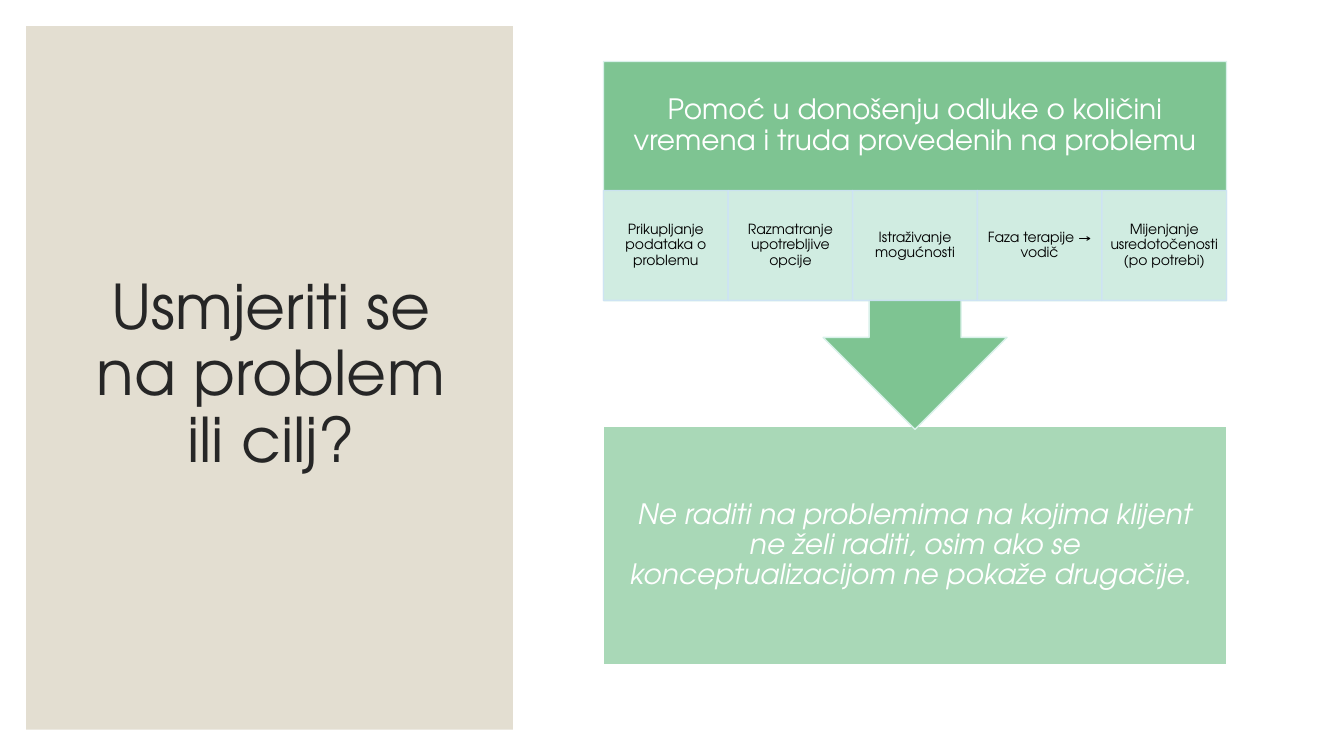
from dataclasses import dataclass

from lxml import etree
from pptx import Presentation
from pptx.dml.color import RGBColor
from pptx.enum.shapes import MSO_SHAPE
from pptx.enum.text import MSO_ANCHOR, MSO_AUTO_SIZE, PP_ALIGN
from pptx.oxml.ns import qn
from pptx.util import Cm, Pt

RECTANGLE = MSO_SHAPE.RECTANGLE
ARROW_CALLOUT = MSO_SHAPE.UP_ARROW_CALLOUT
MIDDLE = MSO_ANCHOR.MIDDLE
CENTER = PP_ALIGN.CENTER
NO_AUTOFIT = MSO_AUTO_SIZE.NONE


@dataclass(frozen=True)
class Theme:
    font: str = "TeX Gyre Adventor"
    title_size: int = 44
    statement_size: int = 20
    step_size: int = 10
    dark: str = "262626"
    black: str = "000000"
    white: str = "FFFFFF"
    sand: str = "E3DED1"
    green: str = "7EC492"
    light_green: str = "A9D8B7"
    mint: str = "D9F1EA"
    pale_blue: str = "CDE3F5"


theme = Theme()


def add_box(shapes, kind, left, top, width, height, fill, line=None):
    box = shapes.add_shape(kind, Cm(left), Cm(top), Cm(width), Cm(height))
    box.shadow.inherit = False
    box.fill.solid()
    box.fill.fore_color.rgb = RGBColor.from_string(fill)
    if line:
        box.line.color.rgb = RGBColor.from_string(line)
        box.line.width = Pt(1)
    else:
        box.line.fill.background()
    return box


def write(box, text, size, color, side=0.4, edge=0.4, italic=None):
    frame = box.text_frame
    frame.text = text
    frame.word_wrap = True
    frame.auto_size = NO_AUTOFIT
    frame.vertical_anchor = MIDDLE
    frame.margin_left = frame.margin_right = Cm(side)
    frame.margin_top = frame.margin_bottom = Cm(edge)
    para = frame.paragraphs[0]
    para.alignment = CENTER
    para.line_spacing = 0.9
    font = para.runs[0].font
    font.name = theme.font
    font.size = Pt(size)
    font.italic = italic
    font.color.rgb = RGBColor.from_string(color)


deck = Presentation()
deck.slide_width, deck.slide_height = Cm(33.87), Cm(19.05)
page = deck.slides.add_slide(deck.slide_layouts[5])

# Title on its sand panel
title = page.shapes.title
title.left, title.top, title.width, title.height = Cm(1.6), Cm(1.55), Cm(10.46), Cm(15.85)
write(title, "Usmjeriti se na problem ili cilj?", theme.title_size, theme.dark, 0.25, 0.13)
panel = add_box(page.shapes, RECTANGLE, 0.66, 0.66, 12.27, 17.73, theme.sand)
title.element.addprevious(panel.element)

# Conclusion at the bottom of the diagram
left, width = 15.21, 15.7
diagram = page.shapes.add_group_shape().shapes
conclusion = add_box(diagram, RECTANGLE, left, 10.74, width, 6.02, theme.light_green, theme.white)
write(conclusion, "Ne raditi na problemima na kojima klijent ne želi raditi, "
      "osim ako se konceptualizacijom ne pokaže drugačije. ",
      theme.statement_size, theme.white, italic=True)

# Arrow callout with its heading
top, heading_height = 1.55, 3.25
callout = add_box(diagram, ARROW_CALLOUT, left, top, width, 9.27, theme.green, theme.mint)
callout.rotation = 180
heading = diagram.add_textbox(Cm(left), Cm(top), Cm(width), Cm(heading_height))
write(heading, "Pomoć u donošenju odluke o količini vremena i truda provedenih na problemu",
      theme.statement_size, theme.white)

# Row of equal, slightly transparent steps
steps = [
    "Prikupljanje podataka o problemu",
    "Razmatranje upotrebljive opcije",
    "Istraživanje mogućnosti",
    "Faza terapije → vodič",
    "Mijenjanje usredotočenosti (po potrebi)",
]
step_width = width / len(steps)
for index, text in enumerate(steps):
    step = add_box(diagram, RECTANGLE, left + index * step_width, top + heading_height,
                   step_width, 2.77, theme.mint, theme.pale_blue)
    for color in step.element.spPr.iter(qn("a:srgbClr")):
        etree.SubElement(color, qn("a:alpha"), val="90000")
    write(step, text, theme.step_size, theme.black, 0.2, 0.03)

deck.save("out.pptx")
